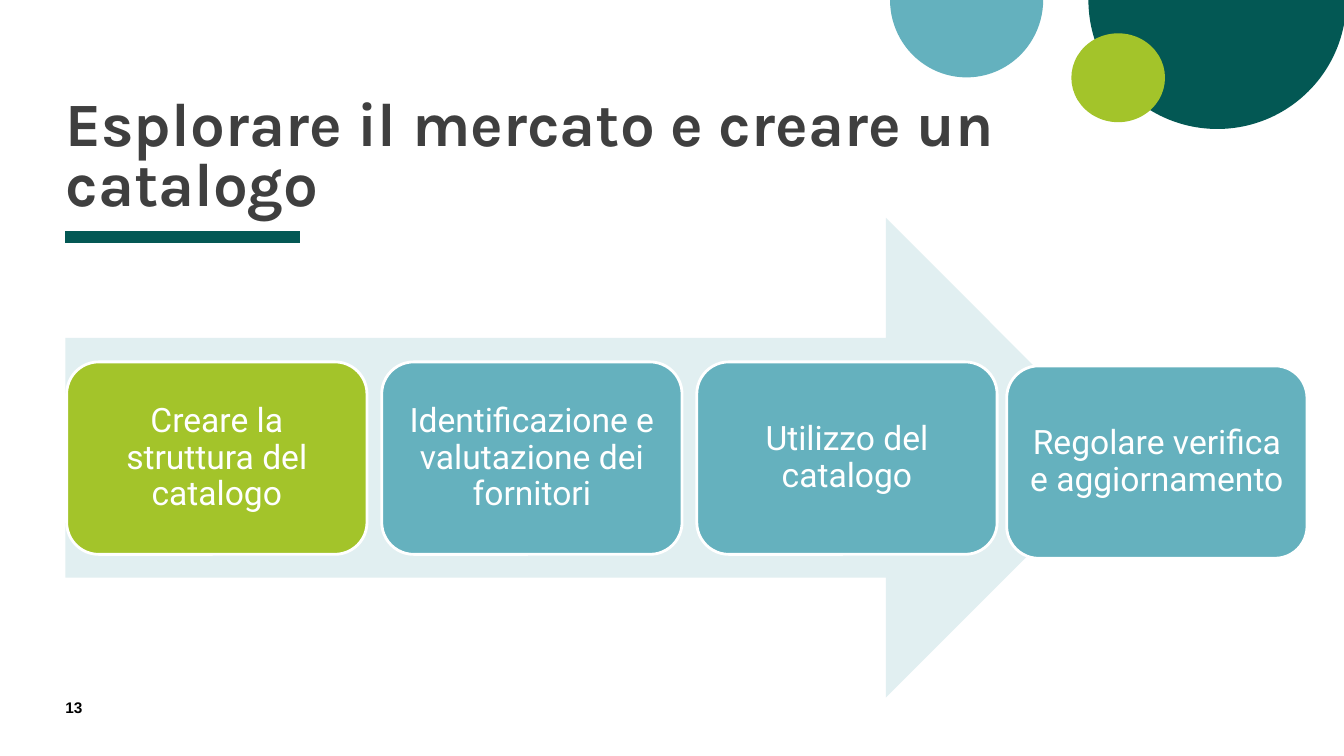
import pptx
import pptx.util
import pptx.dml.color
import pptx.enum.shapes
import pptx.enum.text
from lxml import etree

Cm, Pt = pptx.util.Cm, pptx.util.Pt
RGBColor = pptx.dml.color.RGBColor
MSO_SHAPE = pptx.enum.shapes.MSO_SHAPE
ANCHOR = pptx.enum.text.MSO_ANCHOR
ALIGN = pptx.enum.text.PP_ALIGN

# Content
TITLE = "Esplorare il mercato e creare un catalogo"
PAGE = "13"
STEPS = [
    "Creare la struttura del catalogo",
    "Identificazione e valutazione dei fornitori",
    "Utilizzo del catalogo",
    "Regolare verifica e aggiornamento",
]

# Colours
DARK_GREEN = RGBColor(0x03, 0x58, 0x54)
TEAL = RGBColor(0x64, 0xB1, 0xBE)
STEP_TEAL = RGBColor(0x65, 0xB1, 0xBE)
LIME = RGBColor(0xA3, 0xC4, 0x2A)
PALE = RGBColor(0xE1, 0xEF, 0xF1)
GREY = RGBColor(0x3F, 0x3F, 0x3F)
BLACK = RGBColor(0, 0, 0)
WHITE = RGBColor(0xFF, 0xFF, 0xFF)

# Layout, in cm
LEFT = 1.65
STEP_W, STEP_H, STEP_TOP, STEP_PITCH = 7.57, 4.85, 9.12, 7.94
LAST_LEFT, LAST_TOP = 25.37, 9.22

prs = pptx.Presentation()
prs.slide_width, prs.slide_height = Cm(33.87), Cm(19.05)
s = prs.slides.add_slide(prs.slide_layouts[6])


def add_shape(kind, x, y, w, h, fill):
    sp = s.shapes.add_shape(kind, Cm(x), Cm(y), Cm(w), Cm(h))
    sp.shadow.inherit = False
    sp.fill.solid()
    sp.fill.fore_color.rgb = fill
    sp.line.fill.background()
    return sp


def write(sp, text, font, size, color, bold=False, inset=0.0,
          anchor=ANCHOR.TOP, align=ALIGN.LEFT, spacing=1.0):
    tf = sp.text_frame
    tf.word_wrap = True
    tf.vertical_anchor = anchor
    tf.margin_left = tf.margin_right = tf.margin_top = tf.margin_bottom = Cm(inset)
    p = tf.paragraphs[0]
    p.alignment, p.line_spacing = align, spacing
    r = p.add_run()
    r.text = text
    r.font.name, r.font.size, r.font.bold = font, Pt(size), bold
    r.font.color.rgb = color
    return r


# Corner circles: the large ones are lower halves
for x, y, w, h, fill in [(27.43, -3.25, 6.5, 6.5, DARK_GREEN),
                         (22.43, -1.96, 3.86, 3.91, TEAL)]:
    half = add_shape(MSO_SHAPE.PIE, x, y, w, h, fill)
    half.adjustments[0], half.adjustments[1] = 0, 108
add_shape(MSO_SHAPE.OVAL, 27, 0.84, 2.36, 2.24, LIME)

# Title and its rule
rule = s.shapes.add_connector(pptx.enum.shapes.MSO_CONNECTOR.STRAIGHT,
                              Cm(LEFT), Cm(5.97), Cm(7.57), Cm(5.97))
rule.line.color.rgb = DARK_GREEN
rule.line.width = Pt(8)
etree.SubElement(rule._element.spPr, pptx.oxml.ns.qn("a:effectLst"))
title = s.shapes.add_textbox(Cm(LEFT), Cm(1.07), Cm(25.91), Cm(4.42))
write(title, TITLE, "Karla", 44, GREY, True, anchor=ANCHOR.BOTTOM, spacing=0.8)

# Page number
page = s.shapes.add_textbox(Cm(LEFT), Cm(17.58), Cm(1.45), Cm(0.69))
write(page, PAGE, "Arial", 11, BLACK, True)

# Process arrow and steps
add_shape(MSO_SHAPE.RIGHT_ARROW, LEFT, 5.49, 26.72, 12.09, PALE)
for i, text in enumerate(STEPS):
    last = i == len(STEPS) - 1
    x = LAST_LEFT if last else LEFT + 0.03 + i * STEP_PITCH
    y = LAST_TOP if last else STEP_TOP
    step = add_shape(MSO_SHAPE.ROUNDED_RECTANGLE, x, y, STEP_W, STEP_H,
                     LIME if i == 0 else STEP_TEAL)
    step.line.color.rgb = WHITE
    step.line.width = Pt(2)
    write(step, text, "Roboto", 24, WHITE, inset=0.3, anchor=ANCHOR.MIDDLE,
          align=ALIGN.CENTER, spacing=0.9)

prs.save("out.pptx")
